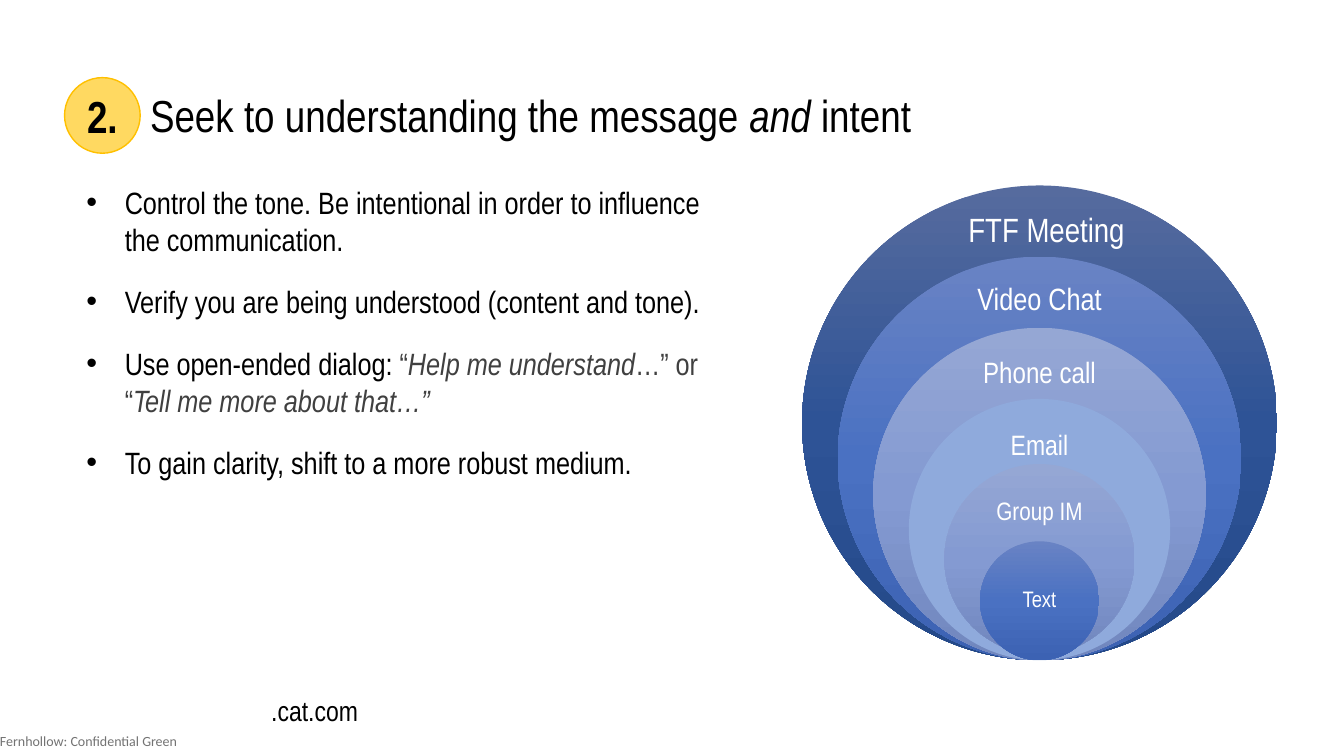
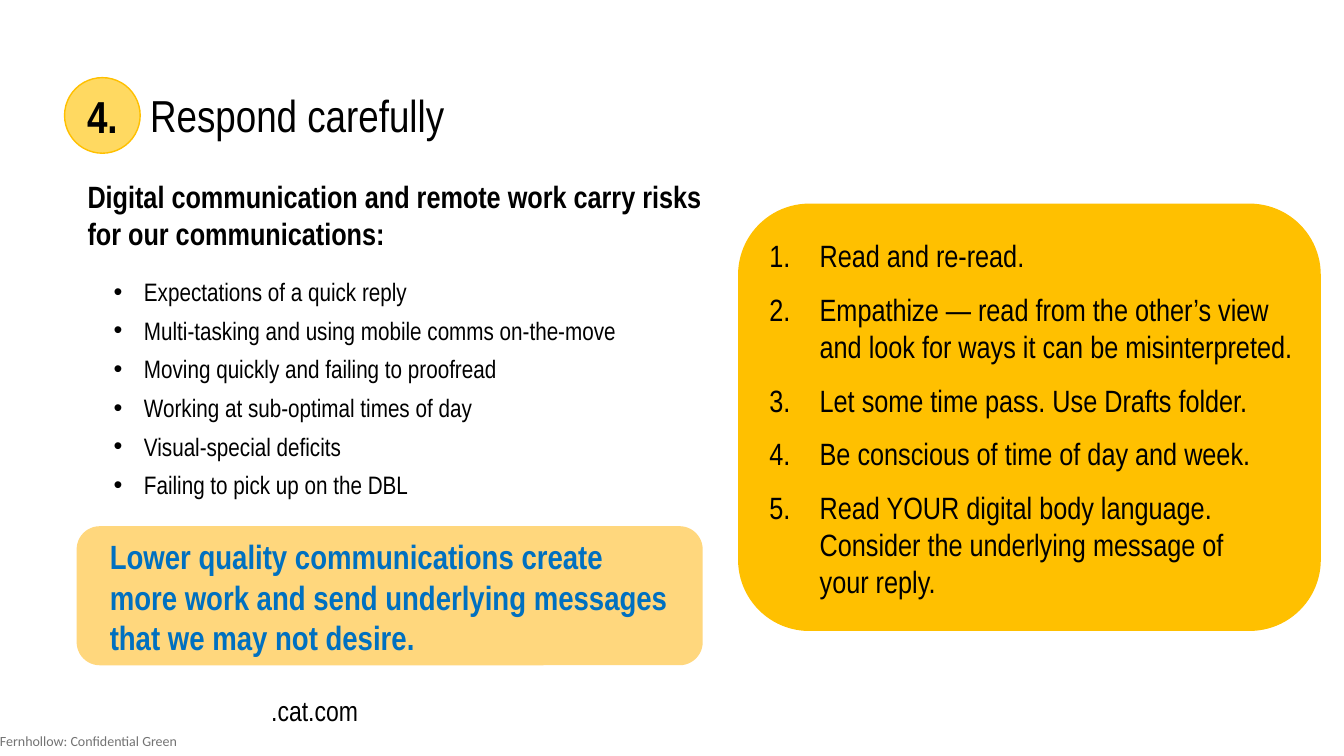
from copy import deepcopy

from lxml.etree import SubElement
from pptx import Presentation
from pptx.dml.color import RGBColor
from pptx.enum.shapes import MSO_SHAPE as Shape
from pptx.enum.text import MSO_ANCHOR as Anchor, PP_ALIGN as Align
from pptx.oxml.ns import qn
from pptx.util import Inches, Pt

NARROW, CALIBRI = "Arial Narrow", "Calibri"
BLACK, WHITE, GREY, QUOTE, BLUE = "000000", "FFFFFF", "737373", "404040", "0070C0"
GOLD, BADGE, PALE_GOLD = "FFC000", "FFD961", "FFD77D"
NAVY = ("566B9E", "2E5396", "244989")
ROYAL = ("6983C4", "4A71C2", "3C62B3")
LILAC = ("95A7D4", "849AD2", "7187BE")
SKY = ("8FAADC",)

SITE = ".cat.com"
MARKING = "Fernhollow: Confidential Green"

INTENT_TITLE = [("Seek to understanding the message ", False, BLACK),
                ("and", True, BLACK), (" intent", False, BLACK)]
INTENT_POINTS = [
    "Control the tone. Be intentional in order to influence the communication.",
    "Verify you are being understood (content and tone).",
    [("Use open-ended dialog: ", False, BLACK), ("“", False, QUOTE),
     ("Help me understand", True, QUOTE), ("…” or “", False, QUOTE),
     ("Tell me more about that…”", True, QUOTE)],
    "To gain clarity, shift to a more robust medium.",
]
# label, size, label centre x, label centre y, colours, lift
MEDIA = [
    ("FTF Meeting", 24, 10.38, 2.3, NAVY, 0),
    ("Video Chat", 22, 10.31, 2.98, ROYAL, 0),
    ("Phone call", 21, 10.31, 3.71, LILAC, 0),
    ("Email", 20, 10.31, 4.43, SKY, 0),
    ("Group IM", 18, 10.31, 5.08, LILAC, 0.06),
    ("Text", 16, 10.31, 5.96, ROYAL, 0),
]
RING_CENTRE, RING_BOTTOM, RING_LARGEST, RING_SMALLEST = 10.31, 6.55, 4.71, 1.18

RISK_HEADING = "Digital communication and remote work carry risks for our communications:"
RISKS = [
    "Expectations of a quick reply",
    "Multi-tasking and using mobile comms on-the-move",
    "Moving quickly and failing to proofread",
    "Working at sub-optimal times of day",
    "Visual-special deficits",
    "Failing to pick up on the DBL",
]
WARNING = ("Lower quality communications create more work and send "
           "underlying messages that we may not desire.")
STEPS = [
    "Read and re-read.",
    "Empathize — read from the other’s view and look for ways it can be misinterpreted.",
    "Let some time pass. Use Drafts folder.",
    "Be conscious of time of day and week.",
    "Read YOUR digital body language. Consider the underlying message of \vyour reply.",
]


def rgb(value):
    """Turn a hex string into a colour."""
    return RGBColor.from_string(value)


def add_mark(para, mark, margin, hang):
    """Give a paragraph a hanging bullet, or a number when mark is '1.'."""
    props = para._p.get_or_add_pPr()
    props.set("marL", str(Inches(margin)))
    props.set("indent", str(-Inches(hang)))
    if mark == "1.":
        SubElement(props, qn("a:buAutoNum"), type="arabicPeriod")
    else:
        SubElement(props, qn("a:buFont"), typeface="Arial")
        SubElement(props, qn("a:buChar"), char=mark)


def write(frame, items, size, color=BLACK, bold=False, font=NARROW, align=Align.LEFT,
          after=0, spacing=None, mark=None, more=False):
    """Write one paragraph per item; an item is a string or a list of styled runs."""
    for index, item in enumerate(items):
        para = frame.add_paragraph() if more or index else frame.paragraphs[0]
        if mark:
            add_mark(para, *mark)
        para.alignment = align
        para.space_after = Pt(after)
        if spacing:
            para.line_spacing = spacing
        para.font.name, para.font.size, para.font.bold = font, Pt(size), bold
        para.font.color.rgb = rgb(color)
        if isinstance(item, str):
            para.text = item
            continue
        for text, italic, run_color in item:
            span = para.add_run()
            span.text = text
            span.font.italic = italic
            span.font.color.rgb = rgb(run_color)


def add_text(page, at, items, size, inset=(0.1, 0.05), anchor=Anchor.TOP, **style):
    """Add a wrapping text box and return its frame."""
    frame = page.shapes.add_textbox(*map(Inches, at)).text_frame
    frame.word_wrap = True
    frame.vertical_anchor = anchor
    frame.margin_left = frame.margin_right = Inches(inset[0])
    frame.margin_top = frame.margin_bottom = Inches(inset[1])
    write(frame, items, size, **style)
    return frame


def add_panel(page, kind, at, colors, line=None):
    """Add a shape filled with one colour or a vertical three-colour gradient."""
    panel = page.shapes.add_shape(kind, *map(Inches, at))
    panel.shadow.inherit = False
    if len(colors) == 1:
        panel.fill.solid()
        panel.fill.fore_color.rgb = rgb(colors[0])
    else:
        panel.fill.gradient()
        panel.fill.gradient_angle = 270
        stops = panel._element.spPr.find(".//" + qn("a:gsLst"))
        stops.append(deepcopy(stops[0]))
        for index, (stop, color) in enumerate(zip(panel.fill.gradient_stops, colors)):
            stop.position = index / 2
            stop.color.rgb = rgb(color)
    if line:
        panel.line.color.rgb = rgb(line)
        panel.line.width = Pt(1)
    else:
        panel.line.fill.background()
    return panel


def add_page(deck, number, title):
    """Add a blank page with the footers, number badge and title."""
    page = deck.slides.add_slide(deck.slide_layouts[6])
    add_text(page, (2.57, 6.86, 3.37, 0.47), [SITE], 20, inset=(0.12, 0.06), spacing=0.9)
    add_text(page, (0, 7.21, 2.06, 0.29), [MARKING], 10, inset=(0, 0),
             anchor=Anchor.MIDDLE, color=GREY, font=CALIBRI)
    badge = add_panel(page, Shape.OVAL, (0.64, 0.77, 0.75, 0.75), (BADGE,), GOLD)
    badge.text_frame.word_wrap = False
    badge.text_frame.vertical_anchor = Anchor.MIDDLE
    write(badge.text_frame, [number], 32, bold=True, align=Align.CENTER)
    add_text(page, (1.39, 0.82, 8.85, 0.64), [title], 32)
    return page


def add_rings(page):
    """Draw the nested media circles, which share their lowest point."""
    step = (RING_LARGEST - RING_SMALLEST) / (len(MEDIA) - 1)
    for index, (label, size, x, y, colors, lift) in enumerate(MEDIA):
        across = RING_LARGEST - index * step
        at = (RING_CENTRE - across / 2, RING_BOTTOM - lift - across, across, across)
        add_panel(page, Shape.OVAL, at, colors)
    for label, size, x, y, colors, lift in MEDIA:
        add_text(page, (x - 1.13, y - 0.25, 2.26, 0.5), [label], size, color=WHITE,
                 anchor=Anchor.MIDDLE, align=Align.CENTER, spacing=0.9)


def main():
    """Build and save the deck."""
    deck = Presentation()
    deck.slide_width, deck.slide_height = Inches(13.33), Inches(7.5)

    page = add_page(deck, "2.", INTENT_TITLE)
    add_text(page, (0.76, 1.77, 6.66, 3.08), INTENT_POINTS, 22, after=18,
             mark=("•", 0.38, 0.38))
    add_rings(page)

    page = add_page(deck, "4.", "Respond carefully")
    add_panel(page, Shape.ROUNDED_RECTANGLE, (0.76, 5.22, 6.21, 1.38), (PALE_GOLD,))
    add_panel(page, Shape.ROUNDED_RECTANGLE, (7.32, 2.02, 5.78, 4.24), (GOLD,))
    frame = add_text(page, (0.77, 1.71, 6.54, 3.65), [RISK_HEADING], 22, bold=True, after=18)
    write(frame, RISKS, 18, after=6, mark=("•", 0.56, 0.3), more=True)
    add_text(page, (7.43, 2.15, 5.65, 4.04), STEPS, 22, inset=(0.2, 0.2), after=12,
             mark=("1.", 0.5, 0.5))
    add_text(page, (0.99, 5.27, 5.75, 1.31), [WARNING], 24, color=BLUE, bold=True)

    deck.save("out.pptx")


if __name__ == "__main__":
    main()
